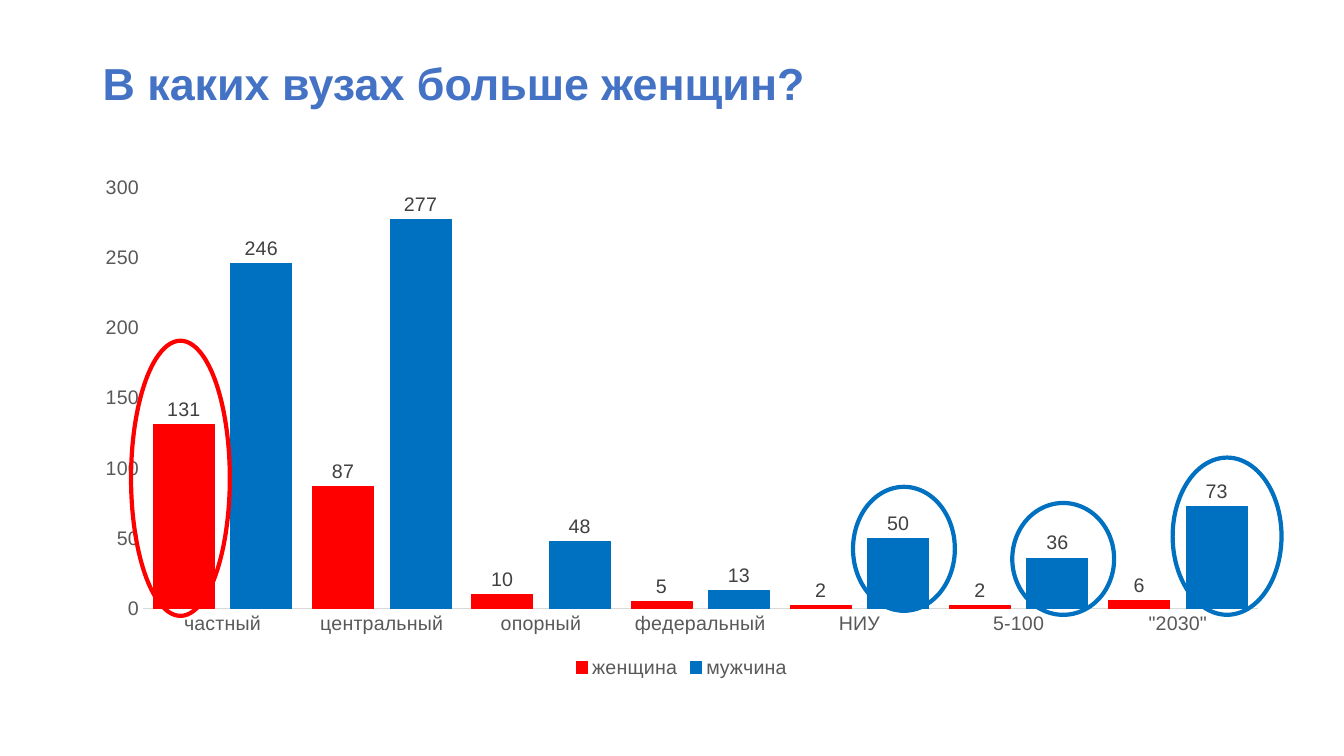
from dataclasses import dataclass

from pptx import Presentation
from pptx.chart.data import CategoryChartData
from pptx.dml.color import RGBColor
from pptx.enum.chart import XL_CHART_TYPE as ChartType
from pptx.enum.chart import XL_LABEL_POSITION as LabelPosition
from pptx.enum.chart import XL_LEGEND_POSITION as LegendPosition
from pptx.enum.chart import XL_TICK_MARK as TickMark
from pptx.enum.shapes import MSO_SHAPE as Shape
from pptx.enum.text import MSO_ANCHOR as Anchor
from pptx.util import Inches, Pt

WIDTH, HEIGHT = Inches(13.33), Inches(7.5)


@dataclass(frozen=True)
class Theme:
    font: str = "Arial"
    title_size: int = 32
    chart_size: int = 14
    title: str = "4472C4"
    women: str = "FF0000"
    men: str = "0070C0"
    axis_text: str = "595959"
    label_text: str = "404040"
    axis_line: str = "D9D9D9"


THEME = Theme()
UNIVERSITIES = ["частный", "центральный", "опорный", "федеральный", "НИУ", "5-100", '"2030"']
COUNTS = [
    ("женщина", THEME.women, [131, 87, 10, 5, 2, 2, 6]),
    ("мужчина", THEME.men, [246, 277, 48, 13, 50, 36, 73]),
]
TITLE_AREA = (6.9, 1.73, 86.27, 19.33)
CHART_AREA = (6.08, 22, 89.27, 68.27)
HIGHLIGHTS = [
    (THEME.women, (9.75, 45.07, 7.35, 36.4)),
    (THEME.men, (63.47, 64.4, 7.58, 16.4)),
    (THEME.men, (75.32, 66.53, 7.58, 14.8)),
    (THEME.men, (87.25, 60.53, 8.1, 20.8)),
]


def place(area):
    left, top, width, height = area
    return [
        round(share * side / 100)
        for share, side in ((left, WIDTH), (top, HEIGHT), (width, WIDTH), (height, HEIGHT))
    ]


def style_font(font, size, color, bold=False):
    font.name = THEME.font
    font.size = Pt(size)
    font.bold = bold
    font.color.rgb = RGBColor.from_string(color)


def style_line(line, color, width):
    line.color.rgb = RGBColor.from_string(color)
    line.width = Pt(width)


def add_title(slide, text):
    frame = slide.shapes.add_textbox(*place(TITLE_AREA)).text_frame
    frame.word_wrap = True
    frame.vertical_anchor = Anchor.MIDDLE
    paragraph = frame.paragraphs[0]
    paragraph.line_spacing = 0.9
    run = paragraph.add_run()
    run.text = text
    style_font(run.font, THEME.title_size, THEME.title, bold=True)


def style_axis(axis):
    axis.has_major_gridlines = False
    axis.major_tick_mark = axis.minor_tick_mark = TickMark.NONE
    style_font(axis.tick_labels.font, THEME.chart_size, THEME.axis_text)


def style_series(series, color):
    series.format.fill.solid()
    series.format.fill.fore_color.rgb = RGBColor.from_string(color)
    style_line(series.format.line, color, 0.75)
    series.invert_if_negative = False
    labels = series.data_labels
    labels.show_value = True
    labels.position = LabelPosition.OUTSIDE_END
    style_font(labels.font, THEME.chart_size, THEME.label_text)


def add_column_chart(slide):
    data = CategoryChartData()
    data.categories = UNIVERSITIES
    for name, _, values in COUNTS:
        data.add_series(name, values)
    chart = slide.shapes.add_chart(ChartType.COLUMN_CLUSTERED, *place(CHART_AREA), data).chart
    chart.has_title = False
    style_font(chart.font, THEME.chart_size, THEME.axis_text)

    chart.has_legend = True
    chart.legend.position = LegendPosition.BOTTOM
    chart.legend.include_in_layout = False
    style_font(chart.legend.font, THEME.chart_size, THEME.axis_text)

    for axis in (chart.category_axis, chart.value_axis):
        style_axis(axis)
    style_line(chart.category_axis.format.line, THEME.axis_line, 0.75)
    chart.value_axis.format.line.fill.background()
    chart.value_axis.minimum_scale = 0
    chart.value_axis.maximum_scale = 300
    chart.value_axis.major_unit = 50

    plot = chart.plots[0]
    plot.gap_width = 34
    plot.overlap = -27
    plot.vary_by_categories = False
    for series, (_, color, _) in zip(plot.series, COUNTS):
        style_series(series, color)


def add_highlight(slide, color, area):
    ellipse = slide.shapes.add_shape(Shape.OVAL, *place(area))
    ellipse.shadow.inherit = False
    ellipse.fill.background()
    style_line(ellipse.line, color, 3)


def main():
    presentation = Presentation()
    presentation.slide_width, presentation.slide_height = WIDTH, HEIGHT
    slide = presentation.slides.add_slide(presentation.slide_layouts[6])
    add_title(slide, "В каких вузах больше женщин?")
    add_column_chart(slide)
    for color, area in HIGHLIGHTS:
        add_highlight(slide, color, area)
    presentation.save("out.pptx")


if __name__ == "__main__":
    main()
